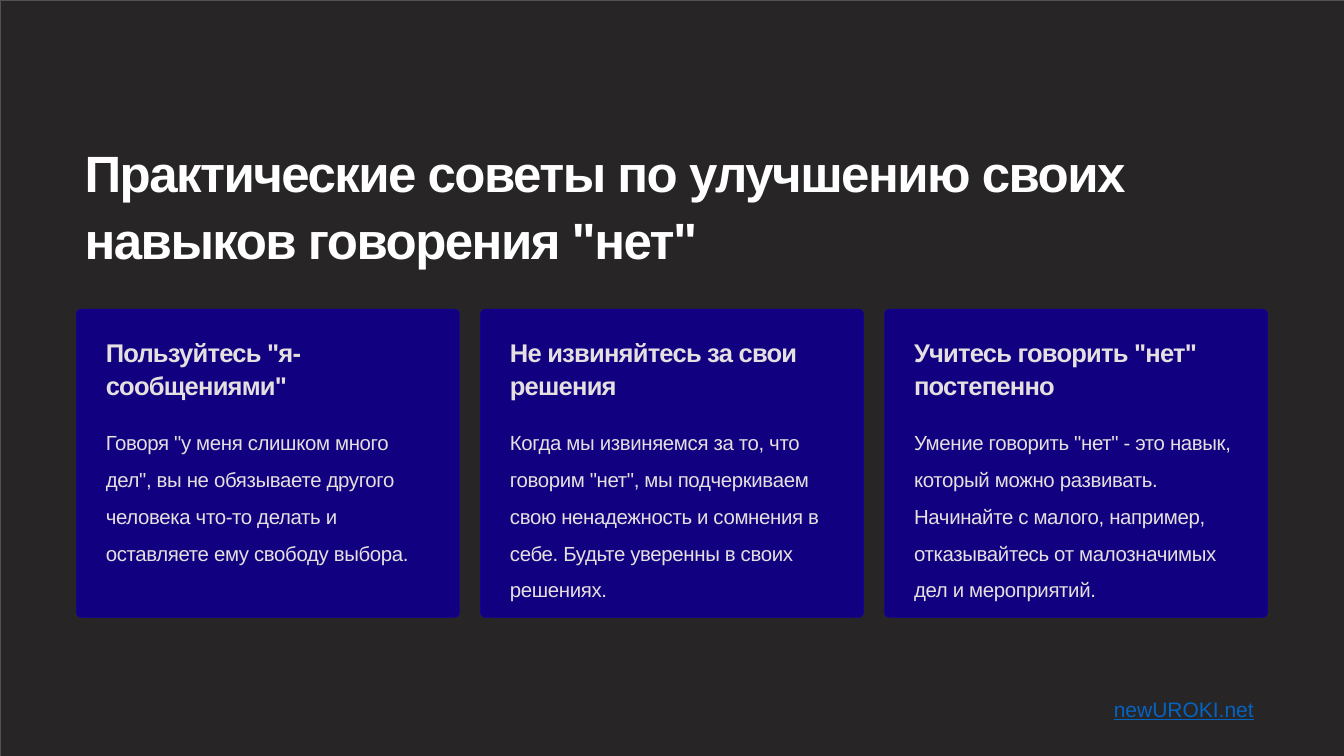
from pptx import Presentation
from pptx.dml.color import RGBColor
from pptx.enum.shapes import MSO_SHAPE as Shape
from pptx.enum.text import MSO_ANCHOR as Anchor, MSO_AUTO_SIZE as AutoSize
from pptx.util import Cm, Pt

WIDTH, HEIGHT = 40.64, 22.86
MARGIN, CARD_TOP = 2.31, 9.35
CARD_WIDTH, CARD_HEIGHT, CARD_STEP = 11.58, 9.32, 12.22
PADDING = 0.64

CARDS = [
    ('Пользуйтесь "я-сообщениями"',
     'Говоря "у меня слишком много дел", вы не обязываете другого человека '
     'что-то делать и оставляете ему свободу выбора.'),
    ('Не извиняйтесь за свои решения',
     'Когда мы извиняемся за то, что говорим "нет", мы подчеркиваем свою '
     'ненадежность и сомнения в себе. Будьте уверенны в своих решениях.'),
    ('Учитесь говорить "нет" постепенно',
     'Умение говорить "нет" - это навык, который можно развивать. Начинайте '
     'с малого, например, отказывайтесь от малозначимых дел и мероприятий.'),
]


def color(value):
    return RGBColor.from_string(value)


class Deck:
    font = "Arial"
    text_color = "E5E0DF"

    def __init__(self):
        self.presentation = Presentation()
        self.presentation.slide_width = Cm(WIDTH)
        self.presentation.slide_height = Cm(HEIGHT)
        self.slide = self.presentation.slides.add_slide(self.presentation.slide_layouts[6])

    def panel(self, kind, left, top, width, height, fill, line):
        shape = self.slide.shapes.add_shape(kind, Cm(left), Cm(top), Cm(width), Cm(height))
        shape.shadow.inherit = False
        shape.fill.solid()
        shape.fill.fore_color.rgb = color(fill)
        shape.line.color.rgb = color(line)
        shape.line.width = Pt(0.6)
        return shape

    def text(self, left, top, width, height, content, size, spacing=0, leading=None,
             bold=False, underline=False, fill=text_color, wrap=True):
        shape = self.slide.shapes.add_textbox(Cm(left), Cm(top), Cm(width), Cm(height))
        frame = shape.text_frame
        frame.word_wrap = wrap
        frame.auto_size = AutoSize.NONE if wrap else AutoSize.SHAPE_TO_FIT_TEXT
        frame.vertical_anchor = Anchor.TOP
        paragraph = frame.paragraphs[0]
        if leading:
            paragraph.line_spacing = Pt(leading)
        run = paragraph.add_run()
        run.text = content
        run.font.name = self.font
        run.font.size = Pt(size)
        run.font.bold = bold
        run.font.underline = underline
        run.font.color.rgb = color(fill)
        if spacing:
            run.font._element.set("spc", str(round(spacing * 100)))

    def card(self, left, heading, body):
        panel = self.panel(Shape.ROUNDED_RECTANGLE, left, CARD_TOP, CARD_WIDTH, CARD_HEIGHT,
                           "110080", "140099")
        panel.adjustments[0] = 0.016
        inner_left, inner_width = left + PADDING, CARD_WIDTH - 2 * PADDING
        self.text(inner_left, CARD_TOP + PADDING, inner_width, 1.98, heading, 21.9,
                  spacing=-0.7, leading=28.4, bold=True)
        self.text(inner_left, 12.52, inner_width, 5.51, body, 17.5,
                  spacing=-0.3, leading=31.5)


def main():
    deck = Deck()
    deck.panel(Shape.RECTANGLE, 0, 0, WIDTH, HEIGHT, "272525", "565151")
    deck.text(MARGIN, 4.01, WIDTH - 2 * MARGIN, 3.99,
              'Практические советы по улучшению своих навыков говорения "нет"', 43.7,
              spacing=-1.3, leading=56.9, bold=True, fill="FFFFFF")
    for index, (heading, body) in enumerate(CARDS):
        deck.card(MARGIN + index * CARD_STEP, heading, body)
    deck.text(33.43, 20.93, 4.78, 1.02, "newUROKI.net", 18,
              underline=True, fill="0563C1", wrap=False)
    deck.presentation.save("out.pptx")


if __name__ == "__main__":
    main()
